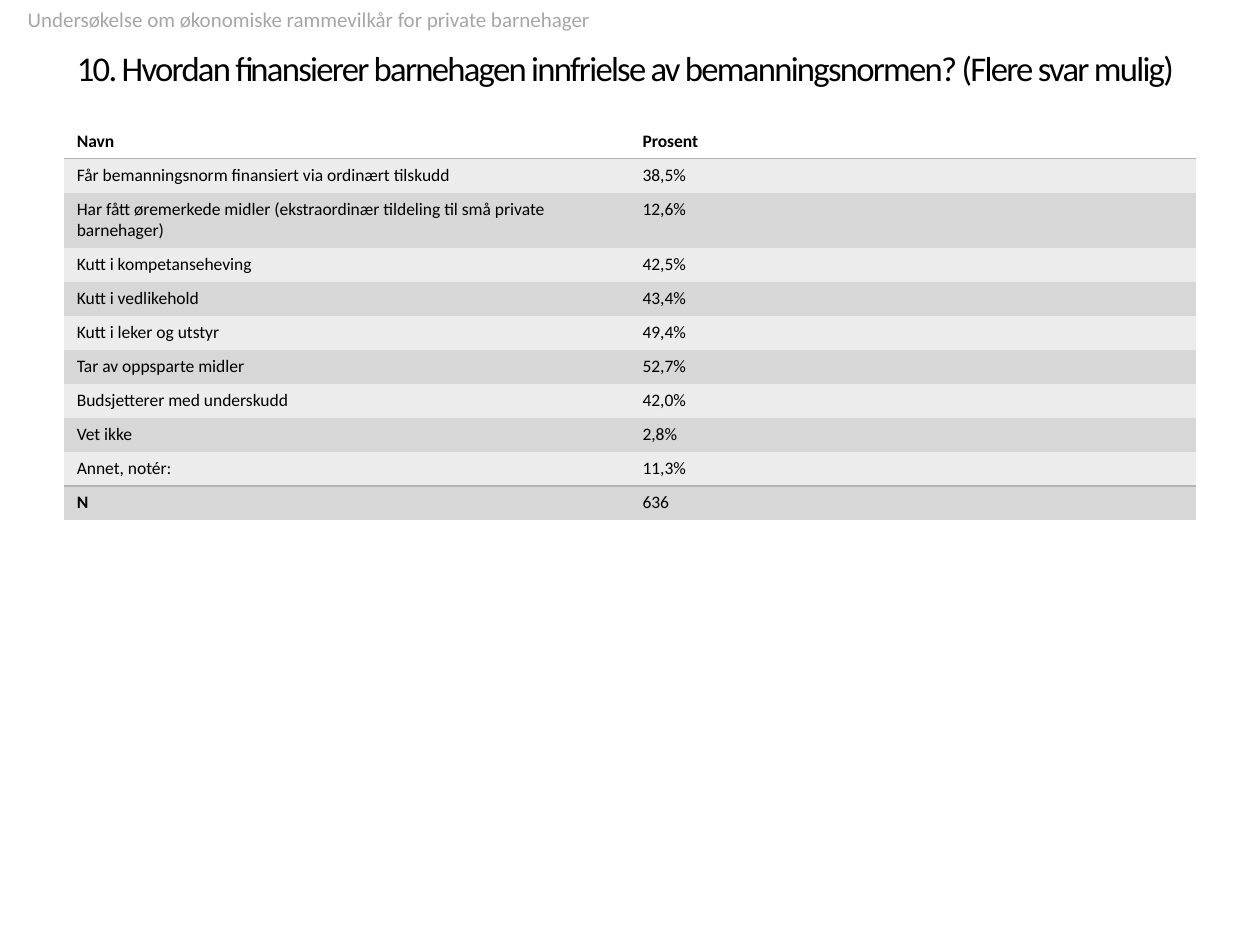
from pptx import Presentation
from pptx.dml.color import RGBColor
from pptx.enum.text import MSO_ANCHOR as Anchor, MSO_AUTO_SIZE as AutoSize, PP_ALIGN as Align
from pptx.oxml.xmlchemy import OxmlElement as Element
from pptx.util import Inches, Pt

COLORS = {"text": "000000", "header": "A6A6A6", "rule": "B4B4B4",
          "white": "FFFFFF", "light": "ECECEC", "dark": "D7D7D8"}
FONT = "Calibri"
WIDTH, HEIGHT = Inches(10), Inches(7.5)
ROW_HEIGHT, TALL_ROW_HEIGHT = Inches(0.27), Inches(0.44)
ROWS = [
    ("Navn", "Prosent"),
    ("Får bemanningsnorm finansiert via ordinært tilskudd", "38,5%"),
    ("Har fått øremerkede midler (ekstraordinær tildeling til små private barnehager)", "12,6%"),
    ("Kutt i kompetanseheving", "42,5%"),
    ("Kutt i vedlikehold", "43,4%"),
    ("Kutt i leker og utstyr", "49,4%"),
    ("Tar av oppsparte midler", "52,7%"),
    ("Budsjetterer med underskudd", "42,0%"),
    ("Vet ikke", "2,8%"),
    ("Annet, notér:", "11,3%"),
    ("N", "636"),
]
TALL_ROW = 2
LAST = len(ROWS) - 1


def rgb(name):
    return RGBColor.from_string(COLORS[name])


def style_paragraph(para, size, color="text", bold=False):
    para.font.name = FONT
    para.font.size = Pt(size)
    para.font.bold = bold
    para.font.color.rgb = rgb(color)


def fill_placeholder(box, text, place, size, color, anchor):
    box.left, box.top, box.width, box.height = (Inches(length) for length in place)
    frame = box.text_frame
    frame.text = text
    frame.word_wrap = True
    frame.auto_size = AutoSize.NONE
    frame.vertical_anchor = anchor
    para = frame.paragraphs[0]
    para.alignment = Align.LEFT
    style_paragraph(para, size, color)
    return para


def add_title(slide):
    para = fill_placeholder(
        slide.shapes.title,
        "10. Hvordan finansierer barnehagen innfrielse av bemanningsnormen? (Flere svar mulig)",
        (0.51, 0.24, 9, 0.6), 19.8, "text", Anchor.MIDDLE)
    para.runs[0].font._element.set("spc", "-100")


def add_survey_name(slide):
    para = fill_placeholder(
        slide.placeholders[1],
        "Undersøkelse om økonomiske rammevilkår for private barnehager",
        (0, 0, 10, 0.25), 12, "header", Anchor.TOP)
    para.space_before = Pt(0)
    properties = para._p.get_or_add_pPr()
    properties.set("marL", str(Inches(0.12)))
    properties.set("indent", "0")
    properties.insert_element_before(Element("a:buNone"), "a:tabLst", "a:defRPr", "a:extLst")


def set_borders(cell, ruled_sides):
    properties = cell._tc.get_or_add_tcPr()
    for index, side in enumerate(("L", "R", "T", "B")):
        line = Element(f"a:ln{side}")
        line.set("w", str(Pt(1)))
        if side in ruled_sides:
            fill, color = Element("a:solidFill"), Element("a:srgbClr")
            color.set("val", COLORS["rule"])
            fill.append(color)
        else:
            fill = Element("a:noFill")
        line.append(fill)
        properties.insert(index, line)


def add_answer_table(slide):
    height = ROW_HEIGHT * LAST + TALL_ROW_HEIGHT
    table = slide.shapes.add_table(
        len(ROWS), 2, Inches(0.51), Inches(0.99), Inches(8.98), height).table
    for number, texts in enumerate(ROWS):
        table.rows[number].height = TALL_ROW_HEIGHT if number == TALL_ROW else ROW_HEIGHT
        band = "white" if number == 0 else "light" if number % 2 else "dark"
        sides = ("T" if number in (1, LAST) else "") + ("B" if number in (0, LAST - 1) else "")
        for column, text in enumerate(texts):
            cell = table.cell(number, column)
            cell.text = text
            cell.fill.solid()
            cell.fill.fore_color.rgb = rgb(band)
            bold = number == 0 or (number == LAST and column == 0)
            style_paragraph(cell.text_frame.paragraphs[0], 10, bold=bold)
            set_borders(cell, sides)


def main():
    deck = Presentation()
    deck.slide_width, deck.slide_height = WIDTH, HEIGHT
    slide = deck.slides.add_slide(deck.slide_layouts[1])
    add_title(slide)
    add_survey_name(slide)
    add_answer_table(slide)
    deck.save("out.pptx")


if __name__ == "__main__":
    main()
